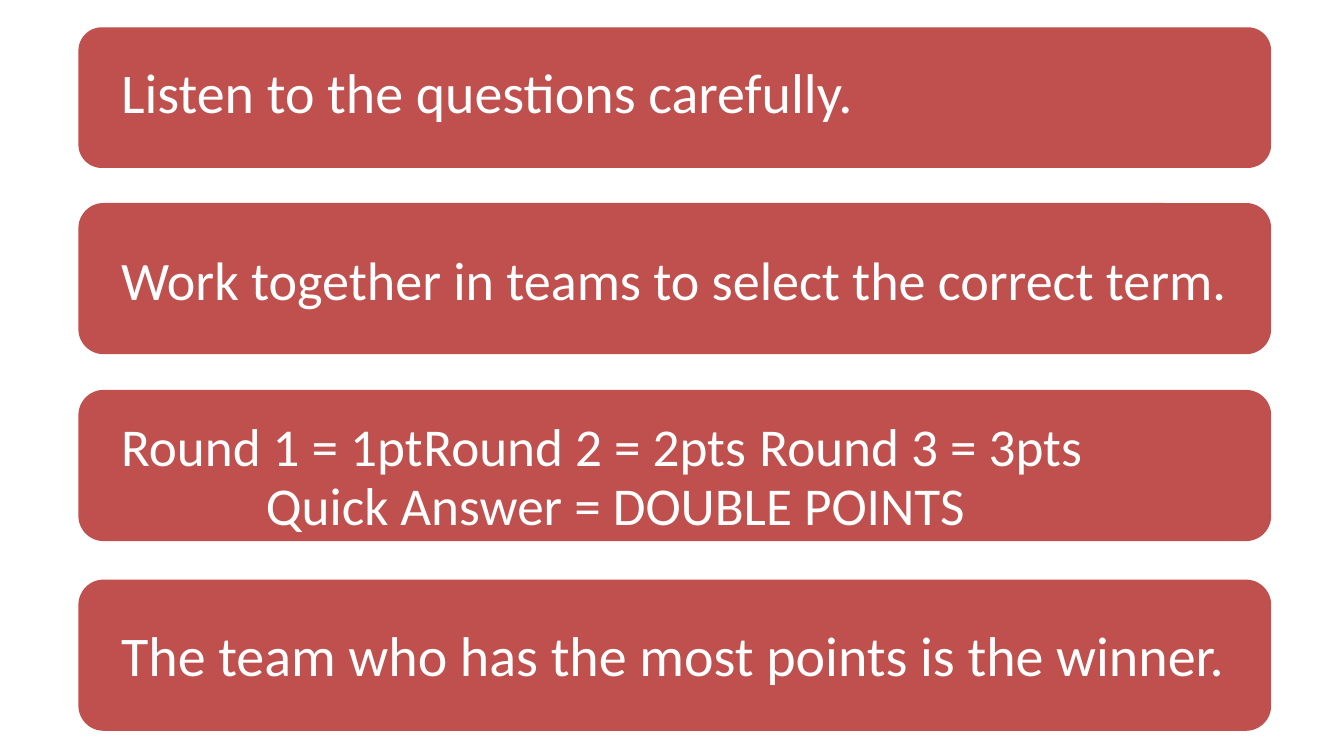
"""Build a quiz rules slide made of four rounded cards."""
from dataclasses import dataclass

from lxml import etree
from pptx import Presentation
from pptx.dml.color import RGBColor
from pptx.enum.shapes import MSO_SHAPE
from pptx.oxml.ns import qn
from pptx.util import Pt

ROUNDED = MSO_SHAPE.ROUNDED_RECTANGLE
EMU_PER_PX = 9525


@dataclass(frozen=True)
class Theme:
    card: RGBColor = RGBColor(0xC0, 0x50, 0x4D)
    text: RGBColor = RGBColor(0xFF, 0xFF, 0xFF)
    font: str = "Calibri"
    large: int = 60
    medium: int = 58
    small: int = 57
    leading: int = 63


def px(length):
    return length * EMU_PER_PX


class RulesPage:
    def __init__(self, page, theme):
        self.page = page
        self.theme = theme

    def card(self, top, height):
        box = self.page.shapes.add_shape(ROUNDED, px(112), px(top), px(1704), px(height))
        box.shadow.inherit = False
        box.fill.solid()
        box.fill.fore_color.rgb = self.theme.card
        box.line.fill.background()

    def text(self, top, size, lines, tabs=()):
        box = self.page.shapes.add_textbox(px(173), px(top), px(1600), px(84 * len(lines)))
        frame = box.text_frame
        frame.word_wrap = True
        frame.margin_left = frame.margin_right = 0
        frame.margin_top = frame.margin_bottom = 0
        for index, (words, indent) in enumerate(lines):
            para = frame.add_paragraph() if index else frame.paragraphs[0]
            para.add_run().text = words
            para.line_spacing = Pt(self.theme.leading)
            self.indent(para, indent, tabs)
            para.font.name = self.theme.font
            para.font.size = Pt(size)
            para.font.color.rgb = self.theme.text

    def indent(self, para, left, tabs):
        properties = para._p.get_or_add_pPr()
        properties.set("marL", str(px(left)))
        properties.set("indent", "0")
        if tabs:
            tab_list = etree.SubElement(properties, qn("a:tabLst"))
            for position in tabs:
                etree.SubElement(tab_list, qn("a:tab"), pos=str(px(position)), algn="l")


def main():
    deck = Presentation()
    deck.slide_width, deck.slide_height = px(1920), px(1080)
    theme = Theme()
    rules = RulesPage(deck.slides.add_slide(deck.slide_layouts[6]), theme)

    for top, height in ((39, 201), (290, 216), (557, 216), (828, 216)):
        rules.card(top, height)

    rules.text(94, theme.large, [("Listen to the questions carefully.", 0)])
    rules.text(361, theme.medium, [("Work together in teams to select the correct term.", 0)])
    rounds = "Round 1 = 1pt\tRound 2 = 2pts\tRound 3 = 3pts"
    rules.text(598, theme.small, [(rounds, 0), ("Quick Answer = DOUBLE POINTS", 207)], (534, 1063))
    rules.text(899, theme.large, [("The team who has the most points is the winner.", 0)])

    deck.save("out.pptx")


if __name__ == "__main__":
    main()
